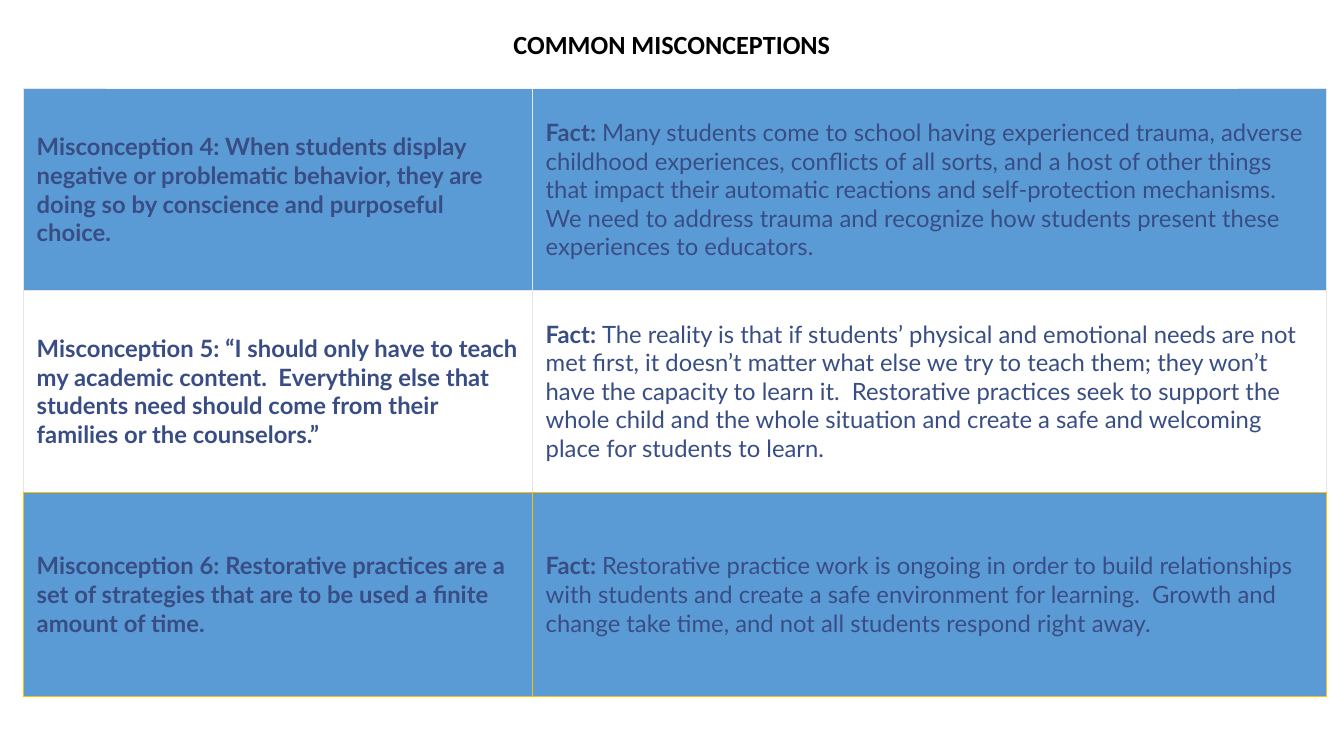
from lxml.etree import SubElement
from pptx import Presentation
from pptx.dml.color import RGBColor
from pptx.enum.text import MSO_ANCHOR as Anchor, MSO_AUTO_SIZE as AutoSize, PP_ALIGN as Align
from pptx.oxml.ns import qn
from pptx.util import Pt

BLACK = RGBColor(0x00, 0x00, 0x00)
WHITE = RGBColor(0xFF, 0xFF, 0xFF)
NAVY = RGBColor(0x39, 0x4D, 0x85)
BLUE = RGBColor(0x5B, 0x9B, 0xD5)
GREY = RGBColor(0xE7, 0xE6, 0xE6)
GOLD = RGBColor(0xFF, 0xC0, 0x00)

MARGIN = Pt(9.6)
COLUMN_WIDTHS = (Pt(363.6), Pt(567.4))
ROW_HEIGHTS = (Pt(144), Pt(144), Pt(146.2))

ROWS = (
    (
        "Misconception 4: When students display negative or problematic behavior, "
        "they are doing so by conscience and purposeful choice.",
        "Many students come to school having experienced trauma, adverse childhood "
        "experiences, conflicts of all sorts, and a host of other things that impact "
        "their automatic reactions and self-protection mechanisms.  We need to address "
        "trauma and recognize how students present these experiences to educators.",
        BLUE, GREY, GREY,
    ),
    (
        "Misconception 5: “I should only have to teach my academic content.  Everything "
        "else that students need should come from their families or the counselors.”",
        "The reality is that if students’ physical and emotional needs are not met first, "
        "it doesn’t matter what else we try to teach them; they won’t have the capacity "
        "to learn it.  Restorative practices seek to support the whole child and the whole "
        "situation and create a safe and welcoming place for students to learn.",
        WHITE, GREY, GOLD,
    ),
    (
        "Misconception 6: Restorative practices are a set of strategies that are to be "
        "used a finite amount of time.",
        "Restorative practice work is ongoing in order to build relationships with "
        "students and create a safe environment for learning.  Growth and change take "
        "time, and not all students respond right away.",
        BLUE, GOLD, GOLD,
    ),
)


def style_run(run, font_name, size, color, bold):
    run.font.name = font_name
    run.font.size = Pt(size)
    run.font.color.rgb = color
    run.font.bold = bold


def set_margins(target):
    target.margin_left = target.margin_right = MARGIN
    target.margin_top = target.margin_bottom = MARGIN


def set_borders(cell, side_color, bottom_color):
    properties = cell._tc.get_or_add_tcPr()
    colors = {"a:lnL": side_color, "a:lnR": side_color,
              "a:lnT": side_color, "a:lnB": bottom_color}
    for position, (tag, color) in enumerate(colors.items()):
        line = SubElement(properties, qn(tag), w=str(Pt(0.75)))
        fill = SubElement(line, qn("a:solidFill"))
        SubElement(fill, qn("a:srgbClr"), val=str(color))
        properties.insert(position, line)


def fill_cell(cell, parts, fill_color, side_color, bottom_color):
    set_margins(cell)
    cell.vertical_anchor = Anchor.MIDDLE
    cell.fill.solid()
    cell.fill.fore_color.rgb = fill_color
    set_borders(cell, side_color, bottom_color)
    paragraph = cell.text_frame.paragraphs[0]
    for text, bold in parts:
        run = paragraph.add_run()
        run.text = text
        style_run(run, "Lato", 17, NAVY, bold)


def add_misconception_table(slide):
    frame = slide.shapes.add_table(
        len(ROWS), len(COLUMN_WIDTHS), Pt(16.6), Pt(63.4),
        sum(COLUMN_WIDTHS), sum(ROW_HEIGHTS))
    table = frame.table
    table.first_row = False
    table.horz_banding = False
    for column, width in zip(table.columns, COLUMN_WIDTHS):
        column.width = width
    for row, height, content in zip(table.rows, ROW_HEIGHTS, ROWS):
        row.height = height
        misconception, fact, *colors = content
        fill_cell(row.cells[0], [(misconception, True)], *colors)
        fill_cell(row.cells[1], [("Fact: ", True), (fact, False)], *colors)


def format_title(title, text):
    title.left, title.top = Pt(75.6), Pt(0)
    title.width, title.height = Pt(808.6), Pt(63.4)
    title.fill.solid()
    title.fill.fore_color.rgb = WHITE
    text_frame = title.text_frame
    text_frame.text = text
    text_frame.word_wrap = True
    text_frame.auto_size = AutoSize.NONE
    text_frame.vertical_anchor = Anchor.MIDDLE
    set_margins(text_frame)
    paragraph = text_frame.paragraphs[0]
    paragraph.alignment = Align.CENTER
    style_run(paragraph.runs[0], "Calibri", 18.7, BLACK, True)
    title.element.getparent().append(title.element)


def main():
    presentation = Presentation()
    presentation.slide_width = Pt(960)
    presentation.slide_height = Pt(540)
    slide = presentation.slides.add_slide(presentation.slide_layouts[5])
    add_misconception_table(slide)
    format_title(slide.shapes.title, "COMMON MISCONCEPTIONS")
    presentation.save("out.pptx")


if __name__ == "__main__":
    main()
